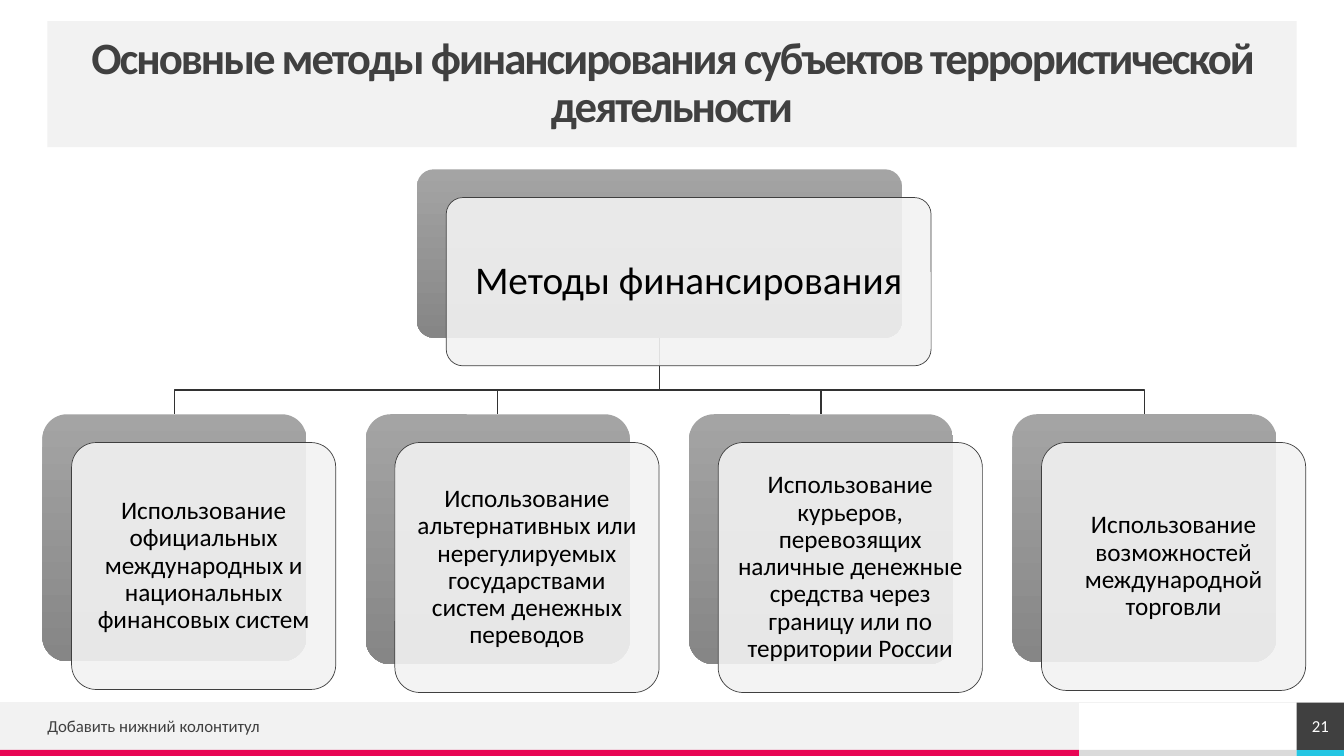
from lxml import etree
from pptx import Presentation
from pptx.dml.color import RGBColor
from pptx.enum.shapes import MSO_CONNECTOR, MSO_SHAPE
from pptx.enum.text import MSO_ANCHOR, PP_ALIGN
from pptx.oxml.ns import qn
from pptx.util import Inches, Pt

RECT, ROUNDED = MSO_SHAPE.RECTANGLE, MSO_SHAPE.ROUNDED_RECTANGLE
STRAIGHT = MSO_CONNECTOR.STRAIGHT
MIDDLE = MSO_ANCHOR.MIDDLE
LEFT, CENTER = PP_ALIGN.LEFT, PP_ALIGN.CENTER

WHITE = RGBColor(0xFF, 0xFF, 0xFF)
BLACK = RGBColor(0, 0, 0)
PALE = RGBColor(0xF2, 0xF2, 0xF2)
SILVER = RGBColor(0xDA, 0xDA, 0xDA)
CHARCOAL = RGBColor(0x40, 0x40, 0x40)
OUTLINE = RGBColor(0x3F, 0x3F, 0x3F)
BRANCH = RGBColor(0x32, 0x32, 0x32)
GRAD_TOP = RGBColor(0xA4, 0xA4, 0xA4)
GRAD_BOTTOM = RGBColor(0x86, 0x86, 0x86)
PINK = RGBColor(0xE8, 0x05, 0x54)
CYAN = RGBColor(0x25, 0xC6, 0xE3)

SLIDE_W, SLIDE_H = 13.33, 7.5
CARD_SHIFT = (0.29, 0.28)

TITLE = "Основные методы финансирования субъектов террористической деятельности"
ROOT = "Методы финансирования"
METHODS = [
    ("Использование официальных международных и национальных финансовых систем", 2.45),
    ("Использование альтернативных или нерегулируемых государствами систем "
     "денежных переводов", 2.48),
    ("Использование курьеров, перевозящих наличные денежные средства через "
     "границу или по территории России", 2.48),
    ("Использование возможностей международной торговли", 2.46),
]


def add_run(paragraph, text, size, color, spacing=None, bold=False):
    run = paragraph.add_run()
    run.text = text
    font_format = {"name": "Calibri", "size": Pt(size), "bold": bold}
    for key, value in font_format.items():
        setattr(run.font, key, value)
    run.font.color.rgb = color
    if spacing is not None:
        run.font._element.set("spc", str(round(spacing * 100)))


def set_frame(shape, align, margin=0, line_spacing=1.0):
    """Prepare the text frame and return its first paragraph."""
    frame_format = {"word_wrap": True, "vertical_anchor": MIDDLE}
    for side in ("left", "top", "right", "bottom"):
        frame_format["margin_" + side] = Inches(margin)
    for key, value in frame_format.items():
        setattr(shape.text_frame, key, value)
    paragraph = shape.text_frame.paragraphs[0]
    paragraph.alignment = align
    paragraph.line_spacing = line_spacing
    return paragraph


def add_block(slide, box, color, preset=RECT):
    block = slide.shapes.add_shape(preset, *map(Inches, box))
    block.shadow.inherit = False
    block.fill.solid()
    block.fill.fore_color.rgb = color
    block.line.fill.background()
    return block


def add_footer(slide, left, top, width, height):
    strip, corner = 0.06, 0.47
    bar_w = 10.7
    band_h = height - strip
    strip_top = top + band_h
    corner_left = left + width - corner

    # Grey band and coloured strips
    add_block(slide, (left + bar_w, strip_top, corner_left - left - bar_w, strip), SILVER)
    add_block(slide, (left, top, bar_w, band_h), PALE)
    add_block(slide, (left, strip_top, bar_w, strip), PINK)
    add_block(slide, (corner_left, strip_top, corner, strip), CYAN)

    # Top rule
    rule = slide.shapes.add_connector(
        STRAIGHT, *map(Inches, (left + width, top, left, top)))
    rule.line.color.rgb = PALE
    rule.line.width = Pt(0.5)
    etree.SubElement(rule._element.spPr, qn("a:effectLst"))

    # Footer text and slide number
    note = slide.shapes.add_textbox(
        *map(Inches, (left + 0.47, top + 0.07, 6.19, 0.32)))
    add_run(set_frame(note, LEFT), "Добавить нижний колонтитул", 12, CHARCOAL)
    number = add_block(slide, (corner_left, top, corner, band_h), CHARCOAL)
    add_run(set_frame(number, CENTER), "21", 12, WHITE)


def add_title(slide, left, top, width, height):
    title = add_block(slide, (left, top, width, height), PALE)
    paragraph = set_frame(title, CENTER, line_spacing=0.9)
    add_run(paragraph, TITLE, 32, CHARCOAL, -1.5, True)


def add_branch(slide, start, end, bend_y):
    """Draw a three-part line from the root card to a method card."""
    (x1, y1), (x2, y2) = start, end
    points = [(Inches(x), Inches(y))
              for x, y in ((x1, y1), (x1, bend_y), (x2, bend_y), (x2, y2))]
    builder = slide.shapes.build_freeform(*points[0], scale=1.0)
    builder.add_line_segments(points[1:], close=False)
    branch = builder.convert_to_shape()
    branch.shadow.inherit = False
    branch.fill.background()
    branch.line.color.rgb = BRANCH
    branch.line.width = Pt(1)


def add_card(slide, box, text, size, margin):
    left, top, width, height = box
    # Gradient back plate
    back = add_block(slide, box, GRAD_TOP, ROUNDED)
    back.adjustments[0] = 0.1
    back.fill.gradient()
    back.fill.gradient_angle = 270
    for stop, color in zip(back.fill.gradient_stops, (GRAD_TOP, GRAD_BOTTOM)):
        stop.color.rgb = color

    # Translucent front plate with the text
    shift_x, shift_y = CARD_SHIFT
    front = add_block(slide, (left + shift_x, top + shift_y, width, height),
                      PALE, ROUNDED)
    front.adjustments[0] = 0.1
    tint = front._element.spPr.find(qn("a:solidFill")).find(qn("a:srgbClr"))
    etree.SubElement(tint, qn("a:alpha")).set("val", "90000")
    front.line.color.rgb = OUTLINE
    front.line.width = Pt(0.5)
    paragraph = set_frame(front, CENTER, margin, 0.9)
    add_run(paragraph, text, size, BLACK)


def add_hierarchy(slide, left, top, width):
    root_w, root_h = 4.81, 1.67
    method_w, method_top = 2.62, top + 2.43
    pitch = (width - CARD_SHIFT[0] - method_w) / (len(METHODS) - 1)
    center = left + (width - CARD_SHIFT[0]) / 2
    lefts = [left + i * pitch for i in range(len(METHODS))]

    # Branches lie behind the cards
    for method_left in reversed(lefts):
        add_branch(slide, (center, top + root_h),
                   (method_left + method_w / 2, method_top), method_top - 0.24)

    # Root card and method cards
    add_card(slide, (center - root_w / 2, top, root_w, root_h), ROOT, 28, 0.12)
    for method_left, (text, height) in zip(lefts, METHODS):
        add_card(slide, (method_left, method_top, method_w, height), text, 18, 0.07)


def main():
    prs = Presentation()
    prs.slide_width, prs.slide_height = Inches(SLIDE_W), Inches(SLIDE_H)
    slide = prs.slides.add_slide(prs.slide_layouts[6])
    add_footer(slide, 0, 6.97, SLIDE_W, 0.53)
    add_title(slide, 0.47, 0.21, 12.39, 1.25)
    add_hierarchy(slide, 0.42, 1.68, 12.53)
    prs.save("out.pptx")


if __name__ == "__main__":
    main()
